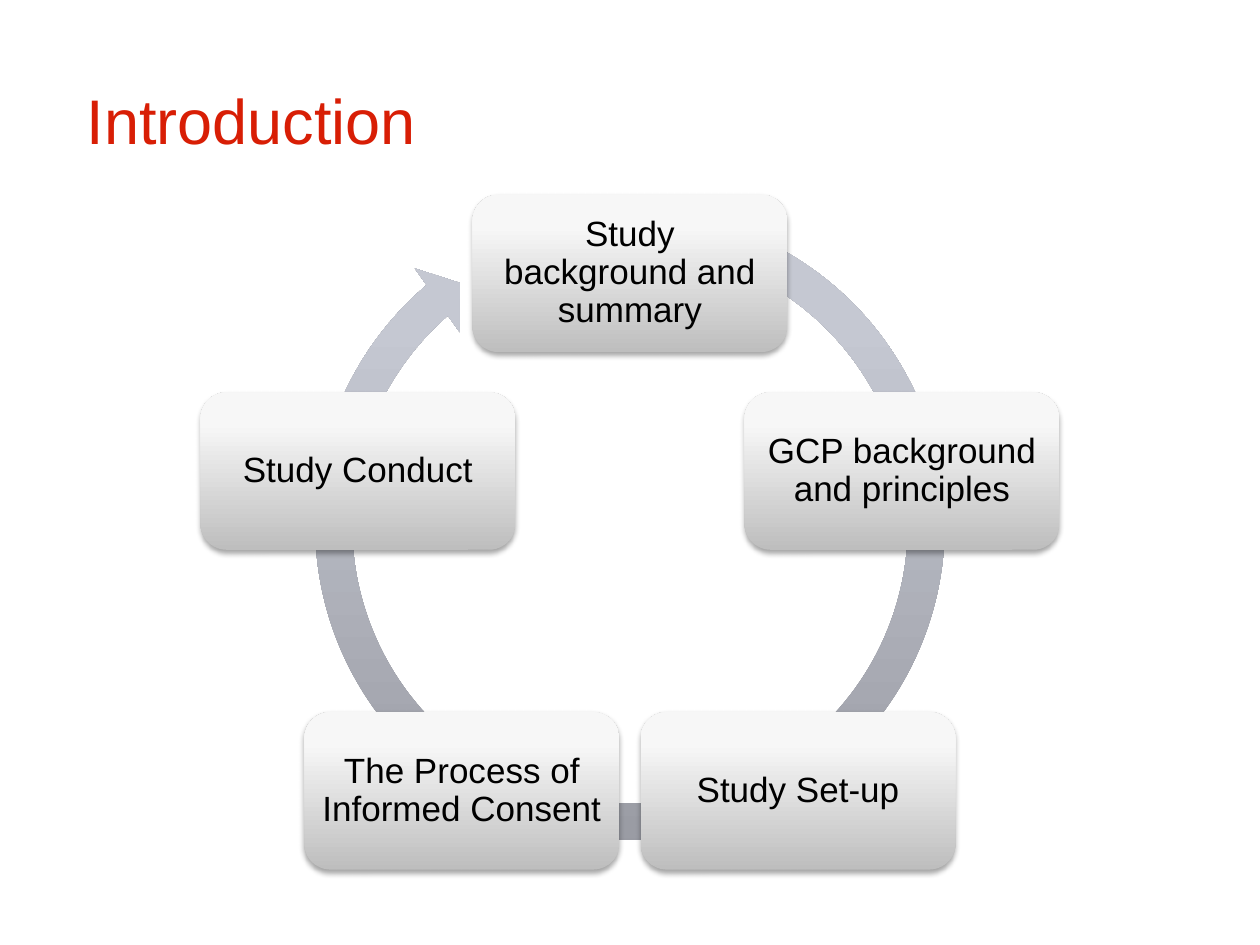
import copy
import math

from lxml import etree
from pptx import Presentation
from pptx.dml.color import RGBColor
from pptx.enum.shapes import MSO_SHAPE
from pptx.enum.text import MSO_ANCHOR, MSO_AUTO_SIZE, PP_ALIGN
from pptx.oxml.ns import qn
from pptx.util import Inches, Pt

ROUNDED = MSO_SHAPE.ROUNDED_RECTANGLE
CIRCULAR_ARROW = MSO_SHAPE.CIRCULAR_ARROW
MIDDLE = MSO_ANCHOR.MIDDLE
LEFT, CENTER = PP_ALIGN.LEFT, PP_ALIGN.CENTER
NO_AUTOFIT = MSO_AUTO_SIZE.NONE

COLORS = {
    "background": "FFFFFF",
    "title": "D81E05",
    "text": "000000",
    "shadow": "000000",
}
NODE_GRADIENT = [(0, "BEBEBE"), (0.8, "F7F7F7"), (1, "F8F8F8")]
ARROW_GRADIENT = [(0, "989AA2"), (0.8, "C5C8D2"), (1, "C5C9D3")]
ARROW_ADJUSTMENTS = [0.055, 3.307, 137.657, 173.922, 0.058]

STEPS = [
    "Study background and summary",
    "GCP background and principles",
    "Study Set-up",
    "The Process of Informed Consent",
    "Study Conduct",
]
NODE_WIDTH, NODE_HEIGHT = 2.5, 1.25


def set_attributes(target, values):
    for name, value in values.items():
        setattr(target, name, value)


def write_text(shape, text, size, color, alignment, frame_format):
    frame = shape.text_frame
    set_attributes(frame, {"word_wrap": True, "auto_size": NO_AUTOFIT,
                           "vertical_anchor": MIDDLE, **frame_format})
    paragraph = frame.paragraphs[0]
    paragraph.text = text
    paragraph.alignment = alignment
    set_attributes(paragraph.font, {"name": "Arial", "size": Pt(size), "bold": False})
    paragraph.font.color.rgb = RGBColor.from_string(COLORS[color])
    return paragraph


def fill_gradient(shape, stops):
    shape.shadow.inherit = False
    shape.line.fill.background()
    shape.fill.gradient()
    shape.fill.gradient_angle = 90
    stop_list = shape.element.spPr.find(".//" + qn("a:gsLst"))
    stop_list.append(copy.deepcopy(stop_list[-1]))
    for stop, (position, color) in zip(shape.fill.gradient_stops, stops):
        stop.position = position
        stop.color.rgb = RGBColor.from_string(color)


def add_soft_shadow(shape):
    effects = shape.element.spPr.find(qn("a:effectLst"))
    shadow = etree.SubElement(effects, qn("a:outerShdw"), blurRad=str(Pt(3.1)),
                              dist=str(Pt(1.8)), dir="5400000", rotWithShape="0")
    color = etree.SubElement(shadow, qn("a:srgbClr"), val=COLORS["shadow"])
    etree.SubElement(color, qn("a:alpha"), val="35000")


def add_title(slide, left, top, width, height):
    title = slide.shapes.title
    set_attributes(title, {"left": Inches(left), "top": Inches(top),
                           "width": Inches(width), "height": Inches(height)})
    write_text(title, "Introduction", 36, "title", LEFT, {})


def add_cycle_arrow(slide, left, top, size):
    arrow = slide.shapes.add_shape(CIRCULAR_ARROW, Inches(left), Inches(top),
                                   Inches(size), Inches(size))
    for index, value in enumerate(ARROW_ADJUSTMENTS):
        arrow.adjustments[index] = value
    fill_gradient(arrow, ARROW_GRADIENT)


def add_node(slide, text, center_x, center_y):
    node = slide.shapes.add_shape(
        ROUNDED, Inches(center_x - NODE_WIDTH / 2), Inches(center_y - NODE_HEIGHT / 2),
        Inches(NODE_WIDTH), Inches(NODE_HEIGHT))
    fill_gradient(node, NODE_GRADIENT)
    add_soft_shadow(node)
    sides = ("left", "top", "right", "bottom")
    margins = {f"margin_{side}": Inches(0.08) for side in sides}
    paragraph = write_text(node, text, 20, "text", CENTER, margins)
    paragraph.line_spacing = 0.9


def add_cycle(slide, center_x, center_y, radius):
    arrow_size = 5.32
    add_cycle_arrow(slide, center_x - arrow_size / 2, 1.51, arrow_size)
    for index, text in enumerate(STEPS):
        angle = math.tau * index / len(STEPS)
        add_node(slide, text, center_x + radius * math.sin(angle),
                 center_y - radius * math.cos(angle))


def main():
    presentation = Presentation()
    presentation.slide_width = Inches(10)
    presentation.slide_height = Inches(7.5)
    slide = presentation.slides.add_slide(presentation.slide_layouts[5])
    slide.background.fill.solid()
    slide.background.fill.fore_color.rgb = RGBColor.from_string(COLORS["background"])
    add_title(slide, 0.59, 0.36, 6.14, 1.18)
    add_cycle(slide, 5, 4.44, 2.27)
    presentation.save("out.pptx")


if __name__ == "__main__":
    main()
